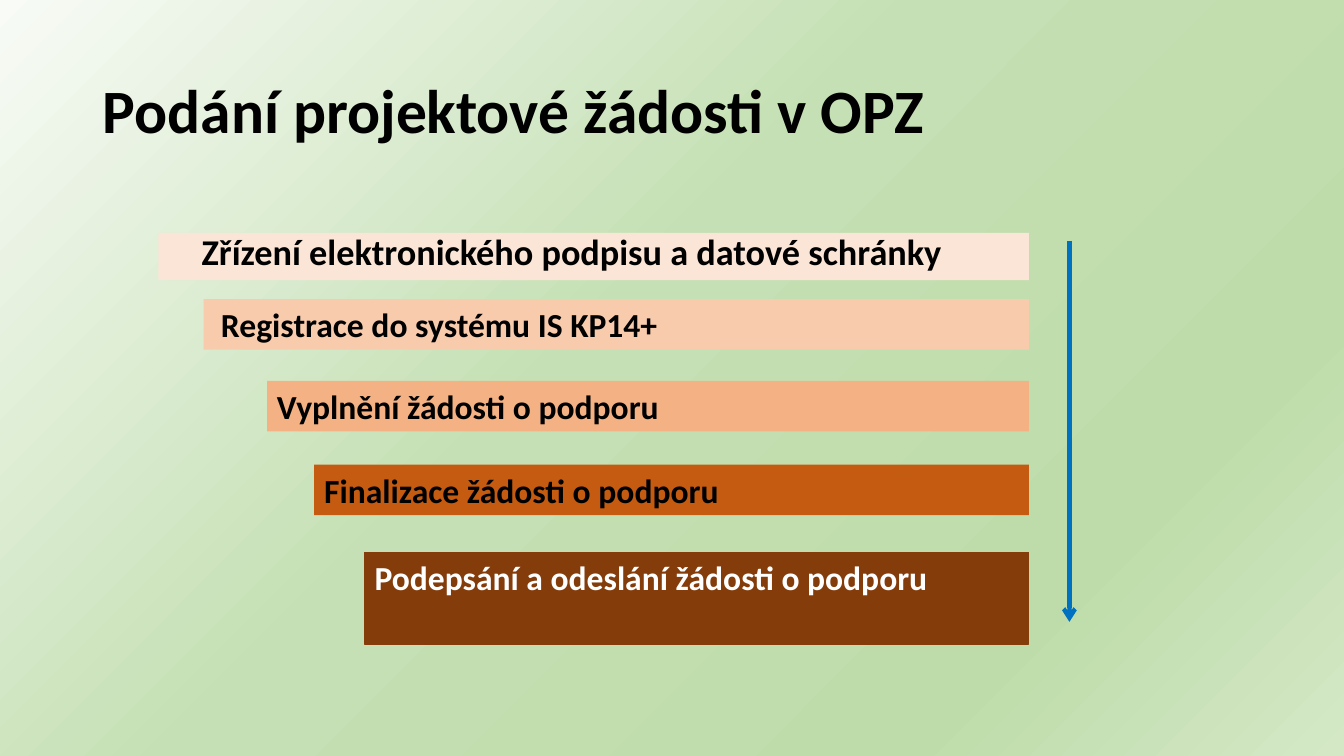
"""Build a slide listing the steps of submitting an OPZ project application."""
from lxml.etree import SubElement
from pptx import Presentation
from pptx.dml.color import RGBColor
from pptx.enum.shapes import MSO_CONNECTOR, MSO_SHAPE
from pptx.enum.text import MSO_ANCHOR, MSO_AUTO_SIZE, PP_ALIGN
from pptx.oxml.ns import qn
from pptx.util import Cm, Pt

TITLE = "Podání projektové žádosti v OPZ"
STEPS = [
    dict(text="Zřízení elektronického podpisu a datové schránky", left=3.99, top=5.87,
         height=1.19, fill="FBE5D6", indent=0.84,
         fmt=dict(size="first", spacing=0.8, before=10, grow=False)),
    dict(text="Registrace do systému IS KP14+", left=5.13, top=7.54,
         height=1.27, fill="F8CBAD", indent=0.19),
    dict(text="Vyplnění žádosti o podporu", left=6.73, top=9.6,
         height=1.27, fill="F4B183"),
    dict(text="Finalizace žádosti o podporu", left=7.92, top=11.71,
         height=1.27, fill="C55A11"),
    dict(text="Podepsání a odeslání žádosti o podporu", left=9.19, top=13.92,
         height=2.31, fill="843C0B", line="843C0B", fmt=dict(color="light")),
]
STEPS_RIGHT = 25.93
INSET = 0.25
ARROW = dict(x=26.95, top=6.07, bottom=15.67)
THEME = dict(
    font="Calibri",
    sizes=dict(title=44, first=25.9, step=24),
    colors=dict(dark="000000", light="FFFFFF", arrow="0070C0"),
    background=[(0, "F8FBF6"), (44, "C5E0B4"), (79, "BEDCAA"), (100, "D4E8C6")],
)


def rgb(value):
    return RGBColor.from_string(value)


def write(sp, text, size="step", color="dark", spacing=None, before=0,
          indent=0, anchor=MSO_ANCHOR.TOP, grow=True):
    tf = sp.text_frame
    tf.word_wrap = True
    tf.auto_size = MSO_AUTO_SIZE.SHAPE_TO_FIT_TEXT if grow else MSO_AUTO_SIZE.NONE
    tf.vertical_anchor = anchor
    tf.margin_left = Cm(INSET + indent)
    p = tf.paragraphs[0]
    p.alignment = PP_ALIGN.LEFT
    p.line_spacing = spacing
    p.space_before = Pt(before)
    r = p.add_run()
    r.text = text
    r.font.name = THEME["font"]
    r.font.size = Pt(THEME["sizes"][size])
    r.font.bold = True
    r.font.color.rgb = rgb(THEME["colors"][color])


def paint_background(slide):
    fill = slide.background.fill
    fill.gradient()
    fill.gradient_angle = 315
    stops = slide.element.find(".//" + qn("a:gsLst"))
    for stop in list(stops):
        stops.remove(stop)
    for position, color in THEME["background"]:
        stop = SubElement(stops, qn("a:gs"), pos=str(position * 1000))
        SubElement(stop, qn("a:srgbClr"), val=color)


def add_step(slide, text, left, top, height, fill, line=None, indent=0, fmt=None):
    sp = slide.shapes.add_shape(MSO_SHAPE.RECTANGLE, Cm(left), Cm(top),
                                Cm(STEPS_RIGHT - left), Cm(height))
    sp.shadow.inherit = False
    sp.fill.solid()
    sp.fill.fore_color.rgb = rgb(fill)
    if line:
        sp.line.color.rgb = rgb(line)
        sp.line.width = Pt(0.75)
    else:
        sp.line.fill.background()
    write(sp, text, indent=indent, **(fmt or {}))


def add_arrow(slide, x, top, bottom):
    s = slide.shapes.add_connector(MSO_CONNECTOR.STRAIGHT,
                                   Cm(x), Cm(top), Cm(x), Cm(bottom))
    s.line.color.rgb = rgb(THEME["colors"]["arrow"])
    s.line.width = Pt(3)
    SubElement(s.line._get_or_add_ln(), qn("a:tailEnd"), type="arrow")
    SubElement(s._element.spPr, qn("a:effectLst"))


def main():
    prs = Presentation()
    prs.slide_width, prs.slide_height = Cm(33.87), Cm(19.05)
    slide = prs.slides.add_slide(prs.slide_layouts[6])
    paint_background(slide)
    title = slide.shapes.add_textbox(Cm(2.34), Cm(1.02), Cm(29.21), Cm(3.68))
    write(title, TITLE, size="title", spacing=0.9, anchor=MSO_ANCHOR.MIDDLE, grow=False)
    for step in STEPS:
        add_step(slide, **step)
    add_arrow(slide, **ARROW)
    prs.save("out.pptx")


if __name__ == "__main__":
    main()
